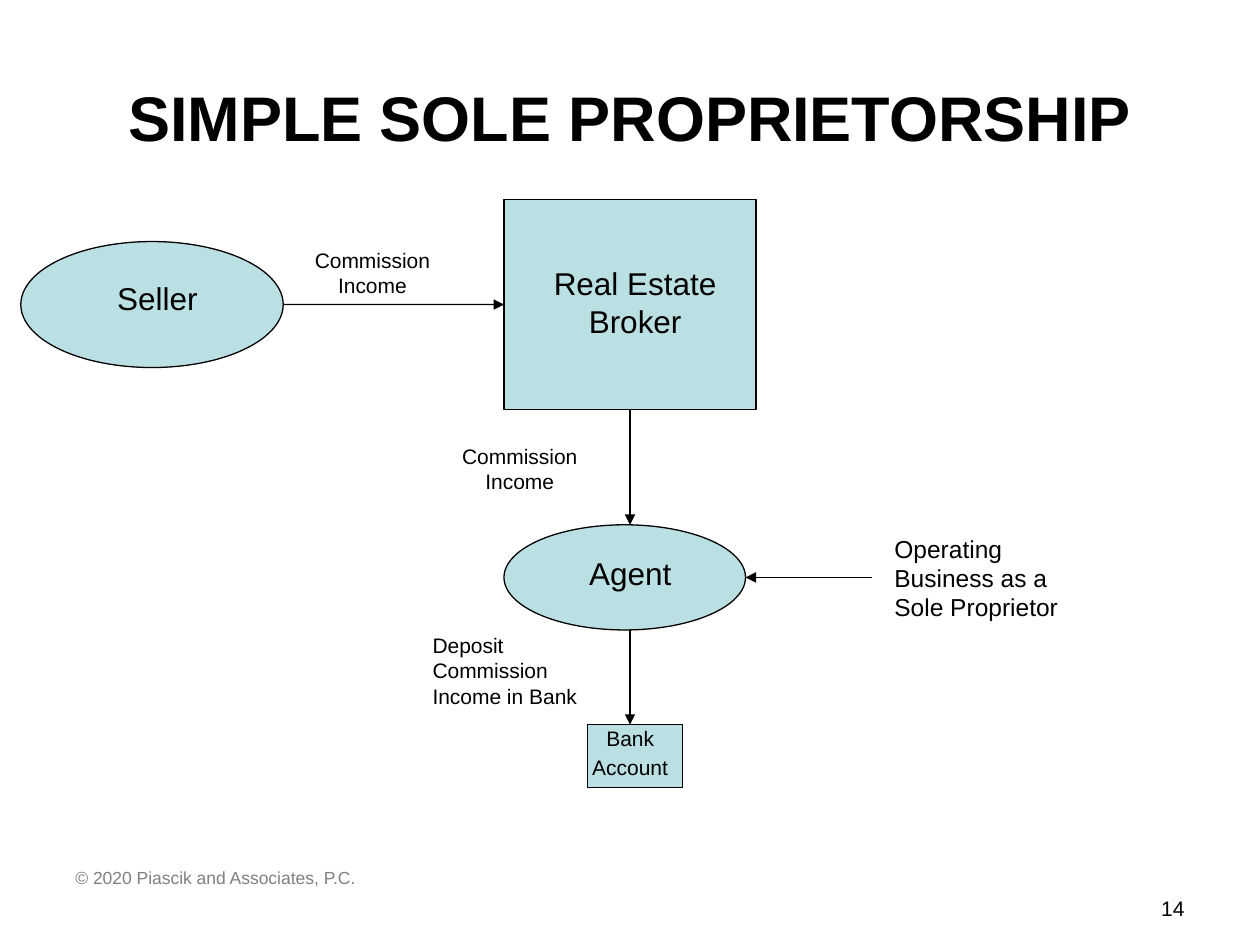
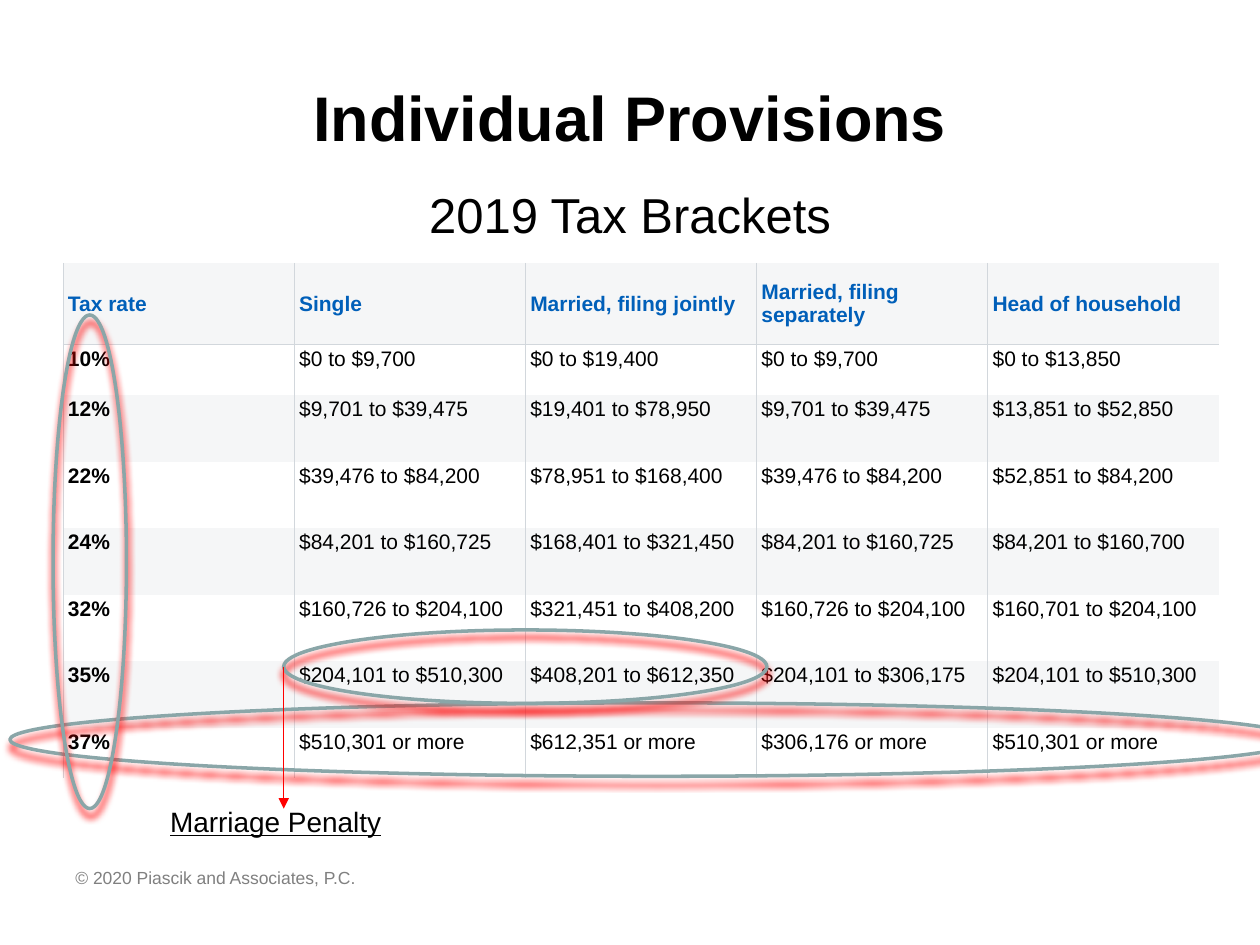
"""Build a sole proprietorship diagram and a tax bracket table."""
import dataclasses

import pptx
import pptx.dml.color
import pptx.enum.shapes
import pptx.enum.text
import pptx.oxml
import pptx.oxml.ns
import pptx.util
from lxml import etree

Cm = pptx.util.Cm
Pt = pptx.util.Pt
ALIGN = pptx.enum.text.PP_ALIGN
ANCHOR = pptx.enum.text.MSO_ANCHOR
SHAPE = pptx.enum.shapes.MSO_SHAPE
qn = pptx.oxml.ns.qn


@dataclasses.dataclass(frozen=True)
class Theme:
    font: str = "Arial"
    ink: str = "000000"
    muted: str = "808080"
    node: str = "BBE0E3"
    ring: str = "8AA6A8"
    alert: str = "FF0000"
    header: str = "005FB9"
    band: str = "F5F6F7"
    paper: str = "FFFFFF"
    rule: str = "D2D7DC"
    title: int = 36
    subtitle: int = 28
    name: int = 18
    callout: int = 16
    note: int = 14
    small: int = 12
    footer: int = 10
    line: float = 0.75
    ring_line: float = 2
    rule_line: float = 0.6


THEME = Theme()

BRACKETS = [
    ["Tax rate", "Single", "Married, filing jointly",
     "Married, filing separately", "Head of household"],
    ["10%", "$0 to $9,700", "$0 to $19,400", "$0 to $9,700", "$0 to $13,850"],
    ["12%", "$9,701 to $39,475", "$19,401 to $78,950",
     "$9,701 to $39,475", "$13,851 to $52,850"],
    ["22%", "$39,476 to $84,200", "$78,951 to $168,400",
     "$39,476 to $84,200", "$52,851 to $84,200"],
    ["24%", "$84,201 to $160,725", "$168,401 to $321,450",
     "$84,201 to $160,725", "$84,201 to $160,700"],
    ["32%", "$160,726 to $204,100", "$321,451 to $408,200",
     "$160,726 to $204,100", "$160,701 to $204,100"],
    ["35%", "$204,101 to $510,300", "$408,201 to $612,350",
     "$204,101 to $306,175", "$204,101 to $510,300"],
    ["37%", "$510,301 or more", "$612,351 or more",
     "$306,176 or more", "$510,301 or more"],
]
ROW_HEIGHTS = [1.65, 1.02] + [1.34] * 5 + [1.02]
COLUMN_WIDTH = 4.66


def rgb(color):
    return pptx.dml.color.RGBColor.from_string(color)


def lengths(values):
    return [Cm(v) for v in values]


def style(p, size, color=THEME.ink, bold=False, underline=False):
    p.font.name = THEME.font
    p.font.size = Pt(size)
    p.font.color.rgb = rgb(color)
    p.font.bold = bold
    p.font.underline = underline


def add_text(slide, box, lines, size, align=ALIGN.LEFT, anchor=ANCHOR.TOP,
             spacing=None, gap=0, **look):
    tf = slide.shapes.add_textbox(*lengths(box)).text_frame
    tf.word_wrap = True
    tf.vertical_anchor = anchor
    for i, line in enumerate(lines):
        p = tf.add_paragraph() if i else tf.paragraphs[0]
        p.text = line
        p.alignment = align
        p.line_spacing = spacing
        p.space_before = Pt(gap if i else 0)
        style(p, size, **look)


def add_node(slide, kind, box):
    sp = slide.shapes.add_shape(kind, *lengths(box))
    sp.shadow.inherit = False
    sp.fill.solid()
    sp.fill.fore_color.rgb = rgb(THEME.node)
    sp.line.color.rgb = rgb(THEME.ink)
    sp.line.width = Pt(THEME.line)
    return sp


def add_ring(slide, box):
    sp = slide.shapes.add_shape(SHAPE.OVAL, *lengths(box))
    sp.shadow.inherit = False
    sp.fill.background()
    sp.line.color.rgb = rgb(THEME.ring)
    sp.line.width = Pt(THEME.ring_line)
    effects = sp._element.spPr.find(qn("a:effectLst"))
    glow = etree.SubElement(effects, qn("a:outerShdw"), blurRad=str(Pt(4)),
                            dist=str(Pt(4)), dir="5400000", rotWithShape="0")
    etree.SubElement(glow, qn("a:srgbClr"), val=THEME.alert)


def add_arrow(slide, start, end, color=THEME.ink):
    kind = pptx.enum.shapes.MSO_CONNECTOR.STRAIGHT
    cxn = slide.shapes.add_connector(kind, *lengths(start + end))
    cxn.line.color.rgb = rgb(color)
    cxn.line.width = Pt(THEME.line)
    etree.SubElement(cxn.line._get_or_add_ln(), qn("a:tailEnd"), type="triangle")
    etree.SubElement(cxn._element.spPr, qn("a:effectLst"))
    return cxn


def set_borders(cell, sides):
    tcPr = cell._tc.get_or_add_tcPr()
    for side in "LRTB":
        ln = etree.SubElement(tcPr, qn(f"a:ln{side}"), w=str(Pt(THEME.rule_line)))
        if side in sides:
            fill = etree.SubElement(ln, qn("a:solidFill"))
            etree.SubElement(fill, qn("a:srgbClr"), val=THEME.rule)
        else:
            etree.SubElement(ln, qn("a:noFill"))


def add_bracket_table(slide, left, top):
    rows, cols = len(BRACKETS), len(BRACKETS[0])
    box = (left, top, COLUMN_WIDTH * cols, sum(ROW_HEIGHTS))
    table = slide.shapes.add_table(rows, cols, *lengths(box)).table
    for column in table.columns:
        column.width = Cm(COLUMN_WIDTH)
    for r, values in enumerate(BRACKETS):
        table.rows[r].height = Cm(ROW_HEIGHTS[r])
        for c, value in enumerate(values):
            cell = table.cell(r, c)
            sides = "L" if c == cols - 1 else "LR"
            set_borders(cell, sides + {0: "B", 1: "T"}.get(r, ""))
            cell.fill.solid()
            cell.fill.fore_color.rgb = rgb(THEME.paper if r % 2 else THEME.band)
            cell.margin_left = cell.margin_right = Cm(0.1)
            cell.margin_top = cell.margin_bottom = Cm(0.05)
            cell.vertical_anchor = ANCHOR.TOP if r else ANCHOR.MIDDLE
            p = cell.text_frame.paragraphs[0]
            p.text = value
            style(p, THEME.small, THEME.ink if r else THEME.header,
                  bold=r == 0 or c == 0)


def new_slide(prs, title):
    slide = prs.slides.add_slide(prs.slide_layouts[6])
    add_text(slide, (1.27, 0.76, 22.86, 3.18), [title], THEME.title,
             ALIGN.CENTER, ANCHOR.MIDDLE, bold=True)
    add_text(slide, (1.27, 17.36, 10.16, 1.32),
             ["© 2020 Piascik and Associates, P.C."], THEME.footer,
             color=THEME.muted)
    return slide


def build_proprietorship(prs):
    slide = new_slide(prs, "SIMPLE SOLE PROPRIETORSHIP")
    add_text(slide, (18.2, 17.36, 5.93, 1.32), ["14"], THEME.small,
             ALIGN.RIGHT, ANCHOR.BOTTOM)

    broker = add_node(slide, SHAPE.RECTANGLE, (10.16, 4.02, 5.08, 4.24))
    add_node(slide, SHAPE.OVAL, (10.16, 10.58, 4.87, 2.12))
    add_node(slide, SHAPE.OVAL, (0.42, 4.87, 5.29, 2.54))
    add_node(slide, SHAPE.RECTANGLE, (11.85, 14.61, 1.91, 1.27))

    seller_to_broker = add_arrow(slide, (5.71, 6.14), (10.16, 6.14))
    seller_to_broker.end_connect(broker, 1)
    broker_to_agent = add_arrow(slide, (12.7, 8.26), (12.7, 10.58))
    broker_to_agent.begin_connect(broker, 2)
    add_arrow(slide, (12.7, 12.7), (12.7, 14.61))
    add_arrow(slide, (17.57, 11.64), (15.03, 11.64))

    for name, box in [("Seller", (1.27, 5.5, 3.81, 1.02)),
                      ("Agent", (10.8, 11.05, 3.81, 1.02)),
                      ("Real Estate Broker", (10.58, 5.2, 4.45, 1.78))]:
        add_text(slide, box, [name], THEME.name, ALIGN.CENTER)
    for left, top in [(5.5, 4.87), (8.47, 8.81)]:
        add_text(slide, (left, top, 4.02, 1.27), ["Commission Income"],
                 THEME.small, ALIGN.CENTER)
    add_text(slide, (8.47, 12.63, 4.02, 1.78),
             ["Deposit Commission Income in Bank"], THEME.small)
    add_text(slide, (11.01, 14.61, 3.39, 1.27), ["Bank", "Account"],
             THEME.small, ALIGN.CENTER, spacing=0.75, gap=6)
    add_text(slide, (17.78, 10.63, 4.45, 2.03),
             ["Operating Business as a Sole Proprietor"], THEME.note)


def build_brackets(prs):
    slide = new_slide(prs, "Individual Provisions")
    add_text(slide, (1.27, 3.6, 22.86, 11.64), ["2019 Tax Brackets"],
             THEME.subtitle, ALIGN.CENTER)
    add_bracket_table(slide, 1.27, 5.3)
    for box in [(0.2, 14.17, 26.04, 1.48), (1.07, 6.35, 1.48, 9.95),
                (5.72, 12.7, 9.74, 1.48)]:
        add_ring(slide, box)
    add_arrow(slide, (5.72, 13.44), (5.72, 16.3), THEME.alert)
    add_text(slide, (3.18, 16.09, 5.5, 0.93), ["Marriage Penalty"],
             THEME.callout, underline=True)


def main():
    prs = pptx.Presentation()
    prs.slide_width, prs.slide_height = Cm(25.4), Cm(19.05)
    build_proprietorship(prs)
    build_brackets(prs)
    prs.save("out.pptx")


if __name__ == "__main__":
    main()
